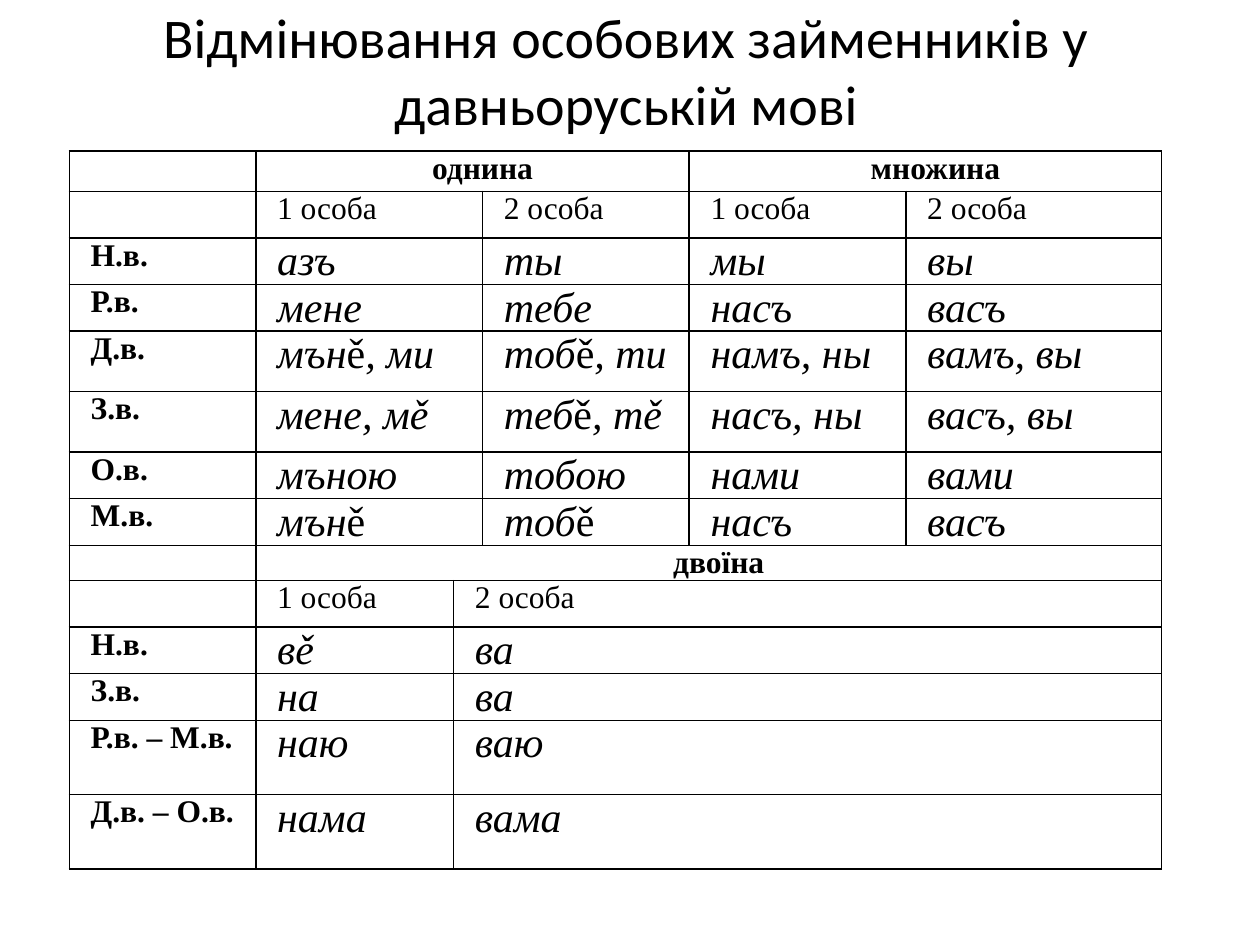
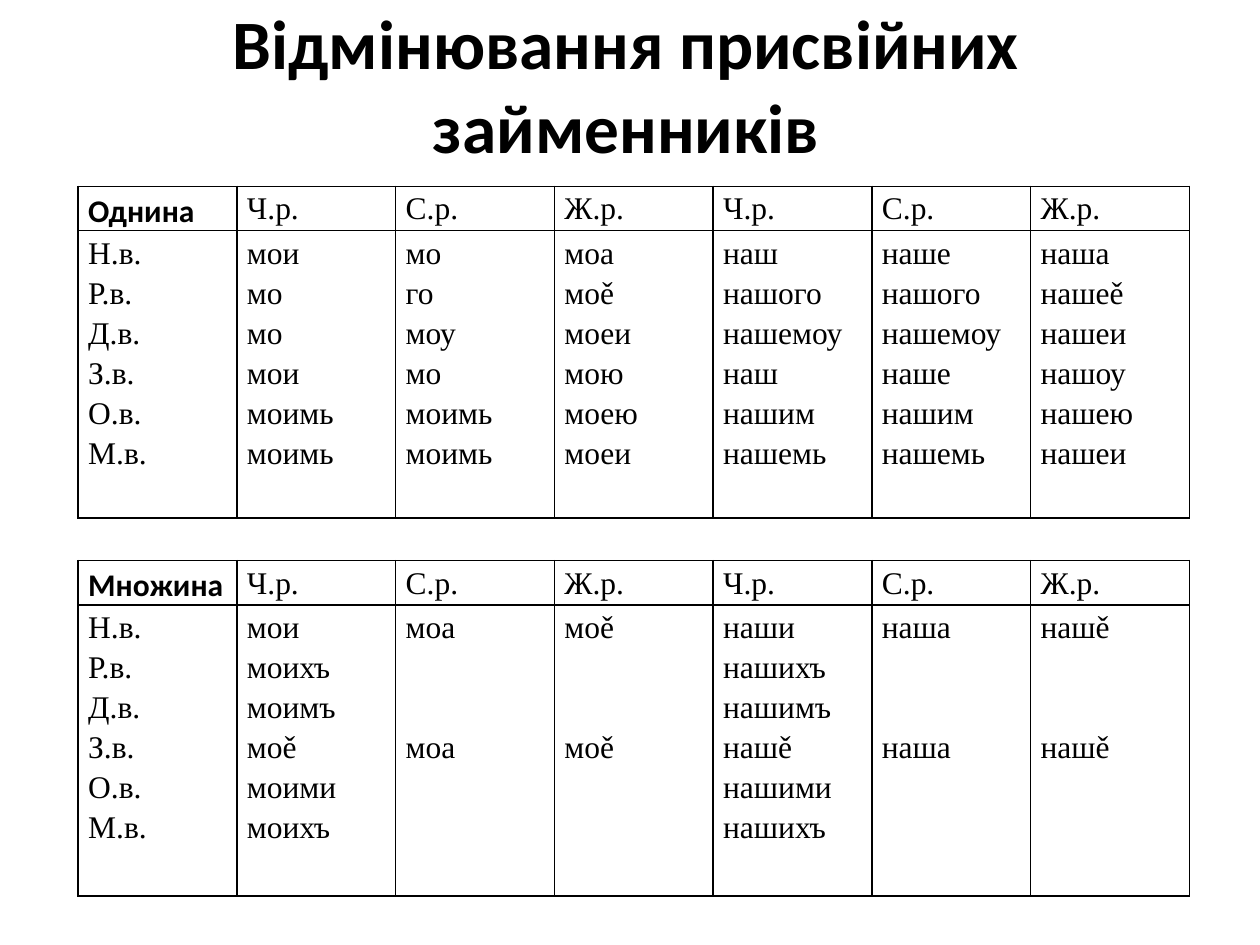
from pptx import Presentation
from pptx.dml.color import RGBColor
from pptx.enum import text as t
from pptx.oxml import parse_xml
from pptx.oxml.ns import nsdecls
from pptx.util import Inches, Pt

BLACK = RGBColor(0x00, 0x00, 0x00)
TITLE_FONT = "Calibri"
TABLE_FONT = "Times New Roman"
LINE_PITCH = 22.9


def write_text(frame, content, size=18, font=TABLE_FONT, bold=False, italic=False,
               centered=False, indent=0, spacing=1.0):
    skipped = 0
    paragraph = frame.paragraphs[0]
    for line in content.split("\n"):
        if not line:
            skipped += 1
            continue
        if paragraph.runs:
            paragraph = frame.add_paragraph()
        paragraph.alignment = t.PP_ALIGN.CENTER if centered else t.PP_ALIGN.LEFT
        paragraph.line_spacing = spacing
        paragraph.space_before = Pt(skipped * LINE_PITCH)
        paragraph._p.get_or_add_pPr().set("marL", str(Inches(indent)))
        paragraph._p.get_or_add_pPr().set("indent", "0")
        skipped = 0
        for index, part in enumerate(line.split("|")):
            if part:
                run = paragraph.add_run()
                run.text = part
                run.font.name = font
                run.font.size = Pt(size)
                run.font.bold = bold
                run.font.italic = italic and index % 2 == 0
                run.font.color.rgb = BLACK
    if not paragraph.runs:
        paragraph._p.get_or_add_endParaRPr().set("sz", "1200")


def add_grid(slide, left, top, widths, heights, inset):
    frame = slide.shapes.add_table(len(heights), len(widths), Inches(left), Inches(top),
                                   Inches(sum(widths)), Inches(sum(heights)))
    table = frame.table
    table.first_row = table.horz_banding = False
    for column, width in zip(table.columns, widths):
        column.width = Inches(width)
    for row, height in zip(table.rows, heights):
        row.height = Inches(height)
    for cell in table.iter_cells():
        cell.margin_left = cell.margin_right = Inches(inset)
        cell.margin_top = cell.margin_bottom = 0
        properties = cell._tc.get_or_add_tcPr()
        for side in ("lnL", "lnR", "lnT", "lnB"):
            properties.append(parse_xml(
                f'<a:{side} {nsdecls("a")} w="{Pt(1)}"><a:solidFill>'
                f'<a:srgbClr val="{BLACK}"/></a:solidFill></a:{side}>'))
        cell.fill.background()
    return table


presentation = Presentation()
presentation.slide_width = Inches(10)
presentation.slide_height = Inches(7.5)

titles = [
    ("Відмінювання особових займенників у давньоруській мові", 0.16, 0.78, 32, False),
    ("Відмінювання присвійних займенників", 0.23, 0.87, 39.6, True),
]
slides = []
for title, top, height, size, bold in titles:
    slide = presentation.slides.add_slide(presentation.slide_layouts[6])
    box = slide.shapes.add_textbox(Inches(0.47), Inches(top), Inches(9), Inches(height))
    box.text_frame.word_wrap = True
    box.text_frame.auto_size = t.MSO_AUTO_SIZE.NONE
    box.text_frame.vertical_anchor = t.MSO_ANCHOR.MIDDLE
    write_text(box.text_frame, title, size=size, font=TITLE_FONT, bold=bold, centered=True)
    slides.append(slide)
personal_slide, possessive_slide = slides

HEADING = dict(bold=True, centered=True)
PERSON = dict()
PRONOUN = dict(size=24, italic=True)
NUMBERS = [(0, 0), (1, 3), (4, 5)]
SINGULAR_PLURAL = [(0, 0), (1, 2), (3, 3), (4, 4), (5, 5)]
DUAL_NUMBER = [(0, 0), (1, 5)]
DUAL = [(0, 0), (1, 1), (2, 5)]
personal_rows = [
    (0.32, NUMBERS, HEADING, ["", "однина", "множина"]),
    (0.37, SINGULAR_PLURAL, PERSON, ["", "1 особа", "2 особа", "1 особа", "2 особа"]),
    (0.37, SINGULAR_PLURAL, PRONOUN, ["Н.в.", "азъ", "ты", "мы", "вы"]),
    (0.37, SINGULAR_PLURAL, PRONOUN, ["Р.в.", "мене", "тебе", "насъ", "васъ"]),
    (0.48, SINGULAR_PLURAL, PRONOUN,
     ["Д.в.", "мън|ě|, ми", "тоб|ě|, ти", "намъ, ны", "вамъ, вы"]),
    (0.48, SINGULAR_PLURAL, PRONOUN,
     ["З.в.", "мене, мě", "теб|ě|, тě", "насъ, ны", "васъ, вы"]),
    (0.37, SINGULAR_PLURAL, PRONOUN, ["О.в.", "мъною", "тобою", "нами", "вами"]),
    (0.37, SINGULAR_PLURAL, PRONOUN, ["М.в.", "мън|ě", "тоб|ě", "насъ", "васъ"]),
    (0.28, DUAL_NUMBER, HEADING, ["", "двоїна"]),
    (0.37, DUAL, PERSON, ["", "1 особа", "2 особа"]),
    (0.37, DUAL, PRONOUN, ["Н.в.", "вě", "ва"]),
    (0.37, DUAL, PRONOUN, ["З.в.", "на", "ва"]),
    (0.59, DUAL, PRONOUN, ["Р.в. – М.в.", "наю", "ваю"]),
    (0.59, DUAL, PRONOUN, ["Д.в. – О.в.", "нама", "вама"]),
]
personal_table = add_grid(personal_slide, 0.55, 1.2, [1.48, 1.57, 0.23, 1.64, 1.72, 2.03],
                          [row[0] for row in personal_rows], 0.01)
for row_index, (height, spans, style, labels) in enumerate(personal_rows):
    for (first, last), label in zip(spans, labels):
        cell = personal_table.cell(row_index, first)
        if last > first:
            cell.merge(personal_table.cell(row_index, last))
        cell_style = dict(bold=True) if first == 0 else style
        write_text(cell.text_frame, label, indent=0.16, **cell_style)

GENDERS = ["Ч.р.", "С.р.", "Ж.р."] * 2
CASES = "Н.в.\nР.в.\nД.в.\nЗ.в.\nО.в.\nМ.в."
possessive_tables = [
    ("Однина", 1.48, [0.35, 2.28], [
        "мои\nмо\nмо\nмои\nмоимь\nмоимь",
        "мо\nго\nмоу\nмо\nмоимь\nмоимь",
        "моа\nмоě\nмоеи\nмою\nмоею\nмоеи",
        "наш\nнашого\nнашемоу\nнаш\nнашим\nнашемь",
        "наше\nнашого\nнашемоу\nнаше\nнашим\nнашемь",
        "наша\nнашеě\nнашеи\nнашоу\nнашею\nнашеи",
    ]),
    ("Множина", 4.45, [0.35, 2.31], [
        "мои\nмоихъ\nмоимъ\nмоě\nмоими\nмоихъ",
        "моа\n\n\nмоа",
        "моě\n\n\nмоě",
        "наши\nнашихъ\nнашимъ\nнашě\nнашими\nнашихъ",
        "наша\n\n\nнаша",
        "нашě\n\n\nнашě",
    ]),
]
for number, top, heights, forms in possessive_tables:
    table = add_grid(possessive_slide, 0.62, top, [1.26] * 7, heights, 0.04)
    for row_index, labels in enumerate([[number] + GENDERS, [CASES] + forms]):
        for column_index, label in enumerate(labels):
            corner = row_index == column_index == 0
            write_text(table.cell(row_index, column_index).text_frame, label,
                       font=TITLE_FONT if corner else TABLE_FONT, bold=corner,
                       indent=0.04, spacing=1.15)

presentation.save("out.pptx")
